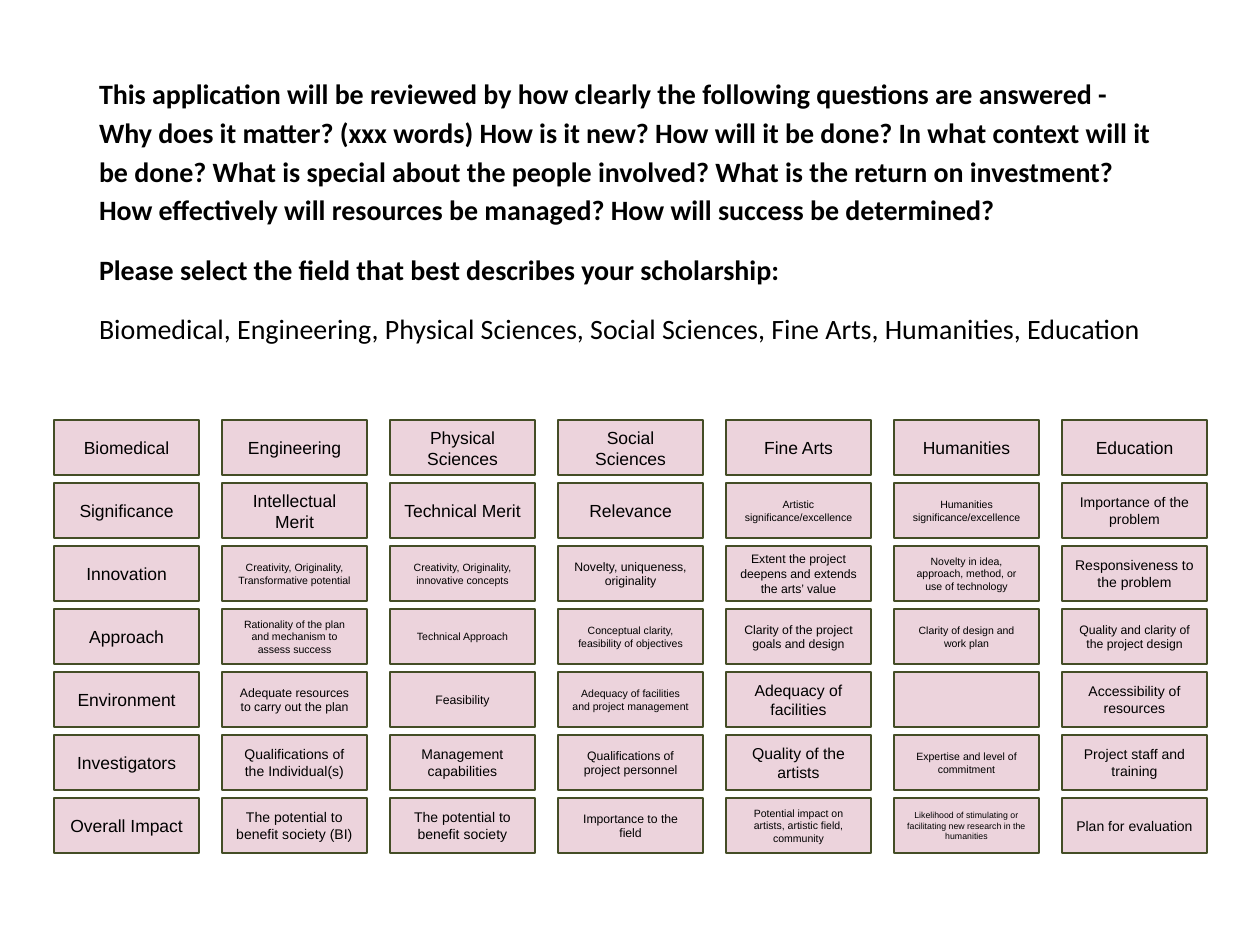
from dataclasses import dataclass

from lxml.etree import SubElement
from pptx import Presentation
from pptx.dml.color import RGBColor
from pptx.enum.shapes import MSO_SHAPE as Shape
from pptx.enum.text import MSO_ANCHOR as Anchor, MSO_AUTO_SIZE as AutoSize, PP_ALIGN as Align
from pptx.oxml.ns import qn
from pptx.util import Pt

PX = 914400 / 126  # EMU per pixel


def px(length):
    return round(length * PX)


@dataclass(frozen=True)
class Theme:
    ink: RGBColor = RGBColor.from_string("000000")
    cell_fill: RGBColor = RGBColor.from_string("ECD3DC")
    cell_line: RGBColor = RGBColor.from_string("444D26")
    body_font: str = "Calibri"
    cell_font: str = "Arial"
    body_size: int = 16
    cell_size: int = 10
    line_width: float = 0.75
    inset: int = 13


def write(para, text, *, font, size, color, bold=False, align=Align.LEFT, spacing=1.0, before=0):
    """Put one formatted span of text into a paragraph without a bullet."""
    props = para._p.get_or_add_pPr()
    props.set("marL", "0")
    props.set("indent", "0")
    SubElement(props, qn("a:buNone"))
    para.alignment = align
    para.line_spacing = spacing
    para.space_before = Pt(before)
    span = para.add_run()
    span.text = text
    span.font.name = font
    span.font.size = Pt(size)
    span.font.bold = bold
    span.font.color.rgb = color


class SlideBuilder:
    def __init__(self, slide, theme):
        self.slide = slide
        self.theme = theme

    def frame(self, shape, anchor):
        frame = shape.text_frame
        frame.word_wrap = True
        frame.auto_size = AutoSize.NONE
        frame.vertical_anchor = anchor
        frame.margin_left = frame.margin_right = px(self.theme.inset)
        frame.margin_top = frame.margin_bottom = px(self.theme.inset)
        return frame

    def body(self, left, top, width, height, items):
        box = self.slide.placeholders[1]
        box.left, box.top, box.width, box.height = map(px, (left, top, width, height))
        frame = self.frame(box, Anchor.TOP)
        for index, (text, bold) in enumerate(items):
            para = frame.add_paragraph() if index else frame.paragraphs[0]
            write(para, text, font=self.theme.body_font, size=self.theme.body_size,
                  color=self.theme.ink, bold=bold, spacing=1.15, before=12 if index else 0)

    def cell(self, left, top, width, height, text, size):
        box = self.slide.shapes.add_shape(Shape.RECTANGLE, *map(px, (left, top, width, height)))
        box.shadow.inherit = False
        box.fill.solid()
        box.fill.fore_color.rgb = self.theme.cell_fill
        box.line.color.rgb = self.theme.cell_line
        box.line.width = Pt(self.theme.line_width)
        if text:
            frame = self.frame(box, Anchor.MIDDLE)
            write(frame.paragraphs[0], text, font=self.theme.cell_font, size=size,
                  color=self.theme.ink, align=Align.CENTER)

    def grid(self, left, top, width, height, step_x, step_y, columns):
        for column, entries in enumerate(columns):
            for row, entry in enumerate(entries):
                text, size = entry if isinstance(entry, tuple) else (entry, self.theme.cell_size)
                self.cell(left + column * step_x, top + row * step_y, width, height, text, size)


INTRO = [
    ("This application will be reviewed by how clearly the following questions are answered - "
     "Why does it matter? (xxx words) How is it new? How will it be done? "
     "In what context will it be done? What is special about the people involved? "
     "What is the return on investment? How effectively will resources be managed? "
     "How will success be determined?", True),
    ("Please select the field that best describes your scholarship:", True),
    ("Biomedical, Engineering, Physical Sciences, Social Sciences, Fine Arts, Humanities, "
     "Education", False),
]

# One list per field, top to bottom; a pair gives a text its own type size
FIELDS = [
    ["Biomedical", "Significance", "Innovation", "Approach", "Environment", "Investigators",
     "Overall Impact"],
    ["Engineering", "Intellectual Merit",
     ("Creativity, Originality, Transformative potential", 6),
     ("Rationality of the plan and mechanism to assess success", 6),
     ("Adequate resources to carry out the plan", 7),
     ("Qualifications of the Individual(s)", 8),
     ("The potential to benefit society (BI)", 8)],
    ["Physical Sciences", "Technical Merit",
     ("Creativity, Originality, innovative concepts", 6),
     ("Technical Approach", 6),
     ("Feasibility", 7),
     ("Management capabilities", 8),
     ("The potential to benefit society", 8)],
    ["Social Sciences", "Relevance",
     ("Novelty, uniqueness, originality", 7),
     ("Conceptual clarity, feasibility of objectives", 6),
     ("Adequacy of facilities and project management", 6),
     ("Qualifications of project personnel", 7),
     ("Importance to the field", 7)],
    ["Fine Arts",
     ("Artistic significance/excellence", 6),
     ("Extent the project deepens and extends the arts’ value", 7),
     ("Clarity of the project goals and design", 7),
     ("Adequacy of facilities", 9),
     ("Quality of the artists", 9),
     ("Potential impact on artists, artistic field, community", 6)],
    ["Humanities",
     ("Humanities significance/excellence", 6),
     ("Novelty in idea, approach, method, or use of technology", 6),
     ("Clarity of design and work plan", 6),
     "",
     ("Expertise and level of commitment", 6),
     ("Likelihood of stimulating or facilitating new research in the humanities", 5)],
    ["Education",
     ("Importance of the problem", 8),
     ("Responsiveness to the problem", 8),
     ("Quality and clarity of the project design", 7),
     ("Accessibility of resources", 8),
     ("Project staff and training", 8),
     ("Plan for evaluation", 8)],
]


def main():
    deck = Presentation()
    deck.slide_width, deck.slide_height = px(1260), px(945)
    page = deck.slides.add_slide(deck.slide_layouts[1])
    builder = SlideBuilder(page, Theme())

    # The page has no title
    title = page.shapes.title.element
    title.getparent().remove(title)

    # Review questions
    builder.body(86, 59, 1091, 340, INTRO)

    # Criteria by field
    builder.grid(54, 420, 145, 55, 168, 63, FIELDS)

    deck.save("out.pptx")


if __name__ == "__main__":
    main()
